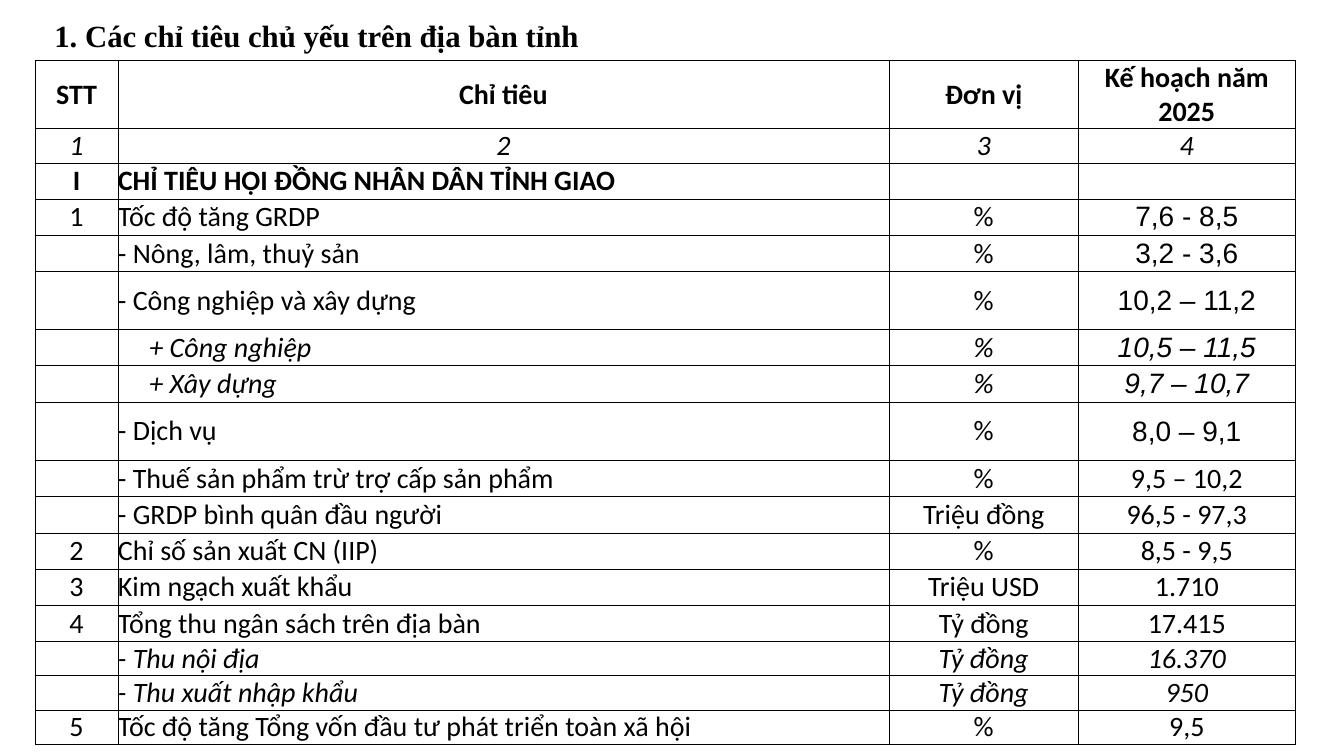
from dataclasses import dataclass
from typing import Any

from lxml import etree
from pptx import Presentation
from pptx import util as u
from pptx.dml import color
from pptx.enum import text
from pptx.oxml import ns


@dataclass(frozen=True)
class Theme:
    """Colours, fonts and type sizes of the slide."""
    ink: str = "000000"
    title_font: str = "Times New Roman"
    body_font: str = "Calibri"
    figure_font: str = "Arial"
    title_size: float = 22
    body_size: float = 20
    border: float = 0.5


@dataclass(frozen=True)
class Indicator:
    """One table row: its four texts, height and style."""
    number: str
    name: str
    unit: str
    plan: str
    height: float = 25.9
    bold: bool = False
    italic: bool = False
    indent: float = 0
    arial_plan: bool = False
    centred: bool = False


THEME = Theme()
LINE = 24.4
COLUMN_WIDTHS = (59, 550.8, 135.4, 154.8)
NAME_COLUMN, PLAN_COLUMN = 1, 3
INDICATORS = (
    Indicator("STT", "Chỉ tiêu", "Đơn vị", "Kế hoạch năm 2025", 2 * LINE, bold=True, centred=True),
    Indicator("1", "2", "3", "4", LINE, italic=True, centred=True),
    Indicator("I", "CHỈ TIÊU HỘI ĐỒNG NHÂN DÂN TỈNH GIAO", "", "", bold=True),
    Indicator("1", "Tốc độ tăng GRDP", "%", "7,6 - 8,5", arial_plan=True),
    Indicator("", "- Nông, lâm, thuỷ sản", "%", "3,2 - 3,6", arial_plan=True),
    Indicator("", "- Công nghiệp và xây dựng", "%", "10,2 – 11,2", 41.4, arial_plan=True),
    Indicator("", "+ Công nghiệp", "%", "10,5 – 11,5", italic=True, indent=22.6, arial_plan=True),
    Indicator("", "+ Xây dựng", "%", "9,7 – 10,7", italic=True, indent=22.6, arial_plan=True),
    Indicator("", "- Dịch vụ", "%", "8,0 – 9,1", 41.8, arial_plan=True),
    Indicator("", "- Thuế sản phẩm trừ trợ cấp sản phẩm", "%", "9,5 – 10,2"),
    Indicator("", "- GRDP bình quân đầu người", "Triệu đồng", "96,5 - 97,3"),
    Indicator("2", "Chỉ số sản xuất CN (IIP)", "%", "8,5 - 9,5"),
    Indicator("3", "Kim ngạch xuất khẩu", "Triệu USD", "1.710"),
    Indicator("4", "Tổng thu ngân sách trên địa bàn", "Tỷ đồng", "17.415"),
    Indicator("", "- Thu nội địa", "Tỷ đồng", "16.370", LINE, italic=True),
    Indicator("", "- Thu xuất nhập khẩu", "Tỷ đồng", "950", LINE, italic=True),
    Indicator("5", "Tốc độ tăng Tổng vốn đầu tư phát triển toàn xã hội", "%", "9,5", LINE),
)


def apply(target: Any, values: dict[str, Any]) -> None:
    """Set each named attribute of the target."""
    for name, value in values.items():
        setattr(target, name, value)


def write(paragraph: Any, content: str, font: dict[str, Any]) -> None:
    """Add one formatted run to the paragraph."""
    run = paragraph.add_run()
    run.text = content
    apply(run.font, font)
    run.font.color.rgb = color.RGBColor.from_string(THEME.ink)


def add_borders(cell: Any) -> None:
    """Draw a thin line on all four sides of the cell."""
    properties = cell._tc.get_or_add_tcPr()
    for side in ("lnL", "lnR", "lnT", "lnB"):
        line = etree.SubElement(properties, ns.qn(f"a:{side}"), w=str(int(u.Pt(THEME.border))))
        fill = etree.SubElement(line, ns.qn("a:solidFill"))
        etree.SubElement(fill, ns.qn("a:srgbClr"), val=THEME.ink)


def fill_cell(cell: Any, content: str, column: int, indicator: Indicator) -> None:
    """Format one table cell and write its text."""
    is_name = column == NAME_COLUMN
    apply(cell, {
        "margin_left": u.Pt(indicator.indent if is_name else 0),
        "margin_right": u.Pt(0),
        "margin_top": u.Pt(0),
        "margin_bottom": u.Pt(0),
        "vertical_anchor": text.MSO_ANCHOR.MIDDLE,
    })
    add_borders(cell)
    cell.fill.background()
    if not content:
        return
    paragraph = cell.text_frame.paragraphs[0]
    left = is_name and not indicator.centred
    paragraph.alignment = text.PP_ALIGN.LEFT if left else text.PP_ALIGN.CENTER
    arial = indicator.arial_plan and column == PLAN_COLUMN
    write(paragraph, content, {
        "name": THEME.figure_font if arial else THEME.body_font,
        "size": u.Pt(THEME.body_size),
        "bold": indicator.bold,
        "italic": indicator.italic,
    })


def add_title(slide: Any, content: str) -> None:
    """Add the heading above the table."""
    shape = slide.shapes.add_textbox(u.Pt(31.7), u.Pt(8.6), u.Pt(802.8), u.Pt(33.8))
    apply(shape.text_frame, {"word_wrap": True, "auto_size": text.MSO_AUTO_SIZE.SHAPE_TO_FIT_TEXT})
    write(shape.text_frame.paragraphs[0], content, {
        "name": THEME.title_font, "size": u.Pt(THEME.title_size), "bold": True,
    })


def add_indicator_table(slide: Any) -> None:
    """Add the table of indicators."""
    height = sum(indicator.height for indicator in INDICATORS)
    table = slide.shapes.add_table(
        len(INDICATORS), len(COLUMN_WIDTHS),
        u.Pt(25.2), u.Pt(43.2), u.Pt(sum(COLUMN_WIDTHS)), u.Pt(height),
    ).table
    apply(table, {"first_row": False, "horz_banding": False})
    for column, width in zip(table.columns, COLUMN_WIDTHS):
        column.width = u.Pt(width)
    for row, indicator in zip(table.rows, INDICATORS):
        row.height = u.Pt(indicator.height)
        contents = (indicator.number, indicator.name, indicator.unit, indicator.plan)
        for column, (cell, content) in enumerate(zip(row.cells, contents)):
            fill_cell(cell, content, column, indicator)


def main() -> None:
    """Build and save the presentation."""
    presentation = Presentation()
    apply(presentation, {"slide_width": u.Pt(960), "slide_height": u.Pt(540)})
    slide = presentation.slides.add_slide(presentation.slide_layouts[6])
    add_title(slide, "1. Các chỉ tiêu chủ yếu trên địa bàn tỉnh")
    add_indicator_table(slide)
    presentation.save("out.pptx")


if __name__ == "__main__":
    main()
